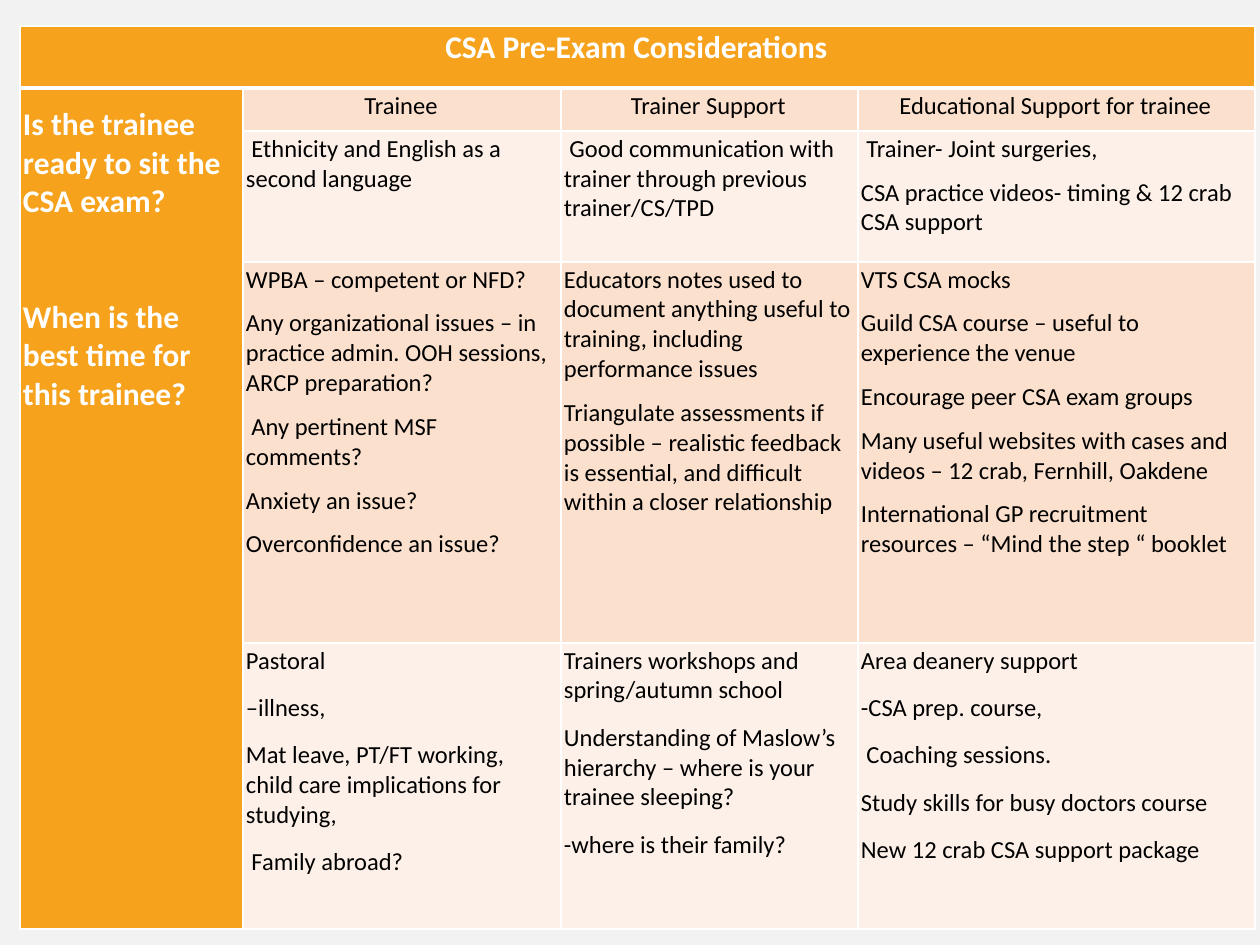
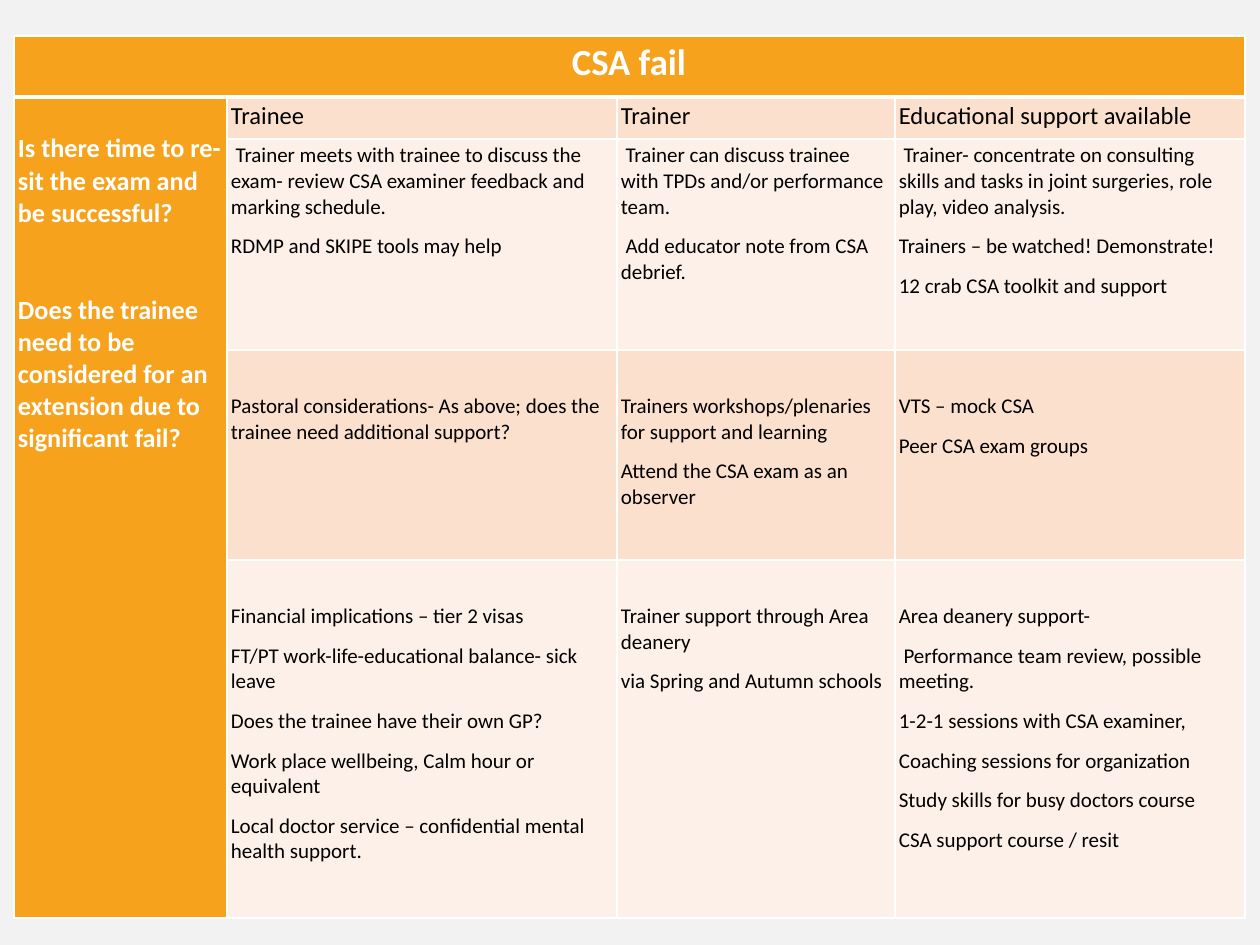
from lxml import etree
from pptx import Presentation
from pptx.dml.color import RGBColor
from pptx.enum import text
from pptx.oxml import ns
from pptx.util import Emu, Pt

SCALE = 914400 / 126
FONT = "Calibri"
WHITE = RGBColor(0xFF, 0xFF, 0xFF)
BLACK = RGBColor(0x00, 0x00, 0x00)
GREY = RGBColor(0xF2, 0xF2, 0xF2)
ORANGE = RGBColor(0xF6, 0xA2, 0x1D)
PEACH = RGBColor(0xFB, 0xE0, 0xCD)
CREAM = RGBColor(0xFD, 0xF0, 0xE8)
CENTER = text.PP_ALIGN.CENTER
LEFT = text.PP_ALIGN.LEFT
RIGHT_PAD = 5

EXAM = {
    "title": "CSA Pre-Exam Considerations",
    "asks": ["Is the trainee ready to sit the CSA exam?",
             "When is the best time for this trainee?"],
    "heads": ["Trainee", "Trainer Support", "Educational Support for trainee"],
    "body": [
        [[" Ethnicity and English as a second language"],
         [" Good communication with trainer through previous trainer/CS/TPD"],
         [" Trainer- Joint surgeries,",
          "CSA practice videos- timing & 12 crab CSA support"]],
        [["WPBA – competent or NFD?",
          "Any organizational issues – in practice admin. OOH sessions, ARCP preparation?",
          " Any pertinent MSF comments?",
          "Anxiety an issue?",
          "Overconfidence an issue?"],
         ["Educators notes used to document anything useful to training, "
          "including performance issues",
          "Triangulate assessments if possible – realistic feedback is essential, "
          "and difficult within a closer relationship"],
         ["VTS CSA mocks",
          "Guild CSA course – useful to experience the venue",
          "Encourage peer CSA exam groups",
          "Many useful websites with cases and videos – 12 crab, Fernhill, Oakdene",
          "International GP recruitment resources – “Mind the step “ booklet"]],
        [["Pastoral", "–illness,",
          "Mat leave, PT/FT working, child care implications for studying,",
          " Family abroad?"],
         ["Trainers workshops and spring/autumn school",
          "Understanding of Maslow’s hierarchy – where is your trainee sleeping?",
          "-where is their family?"],
         ["Area deanery support", "-CSA prep. course,", " Coaching sessions.",
          "Study skills for busy doctors course",
          "New 12 crab CSA support package"]],
    ],
    "place": (20, 26),
    "cols": [223, 318, 297, 397],
    "rows": [62, 43, 131, 381, 286],
    "pad": 3, "sizes": (18, 18, 14), "align": CENTER,
    "drop": 15, "gap": 44, "tops": (0, 0, 0), "after": (8, 8, 10),
}

FAIL = {
    "title": "CSA fail",
    "asks": ["Is there time to re-sit the exam and be successful?",
             "Does the trainee need to be considered for an extension due to significant fail?"],
    "heads": ["Trainee", "Trainer", "Educational support available"],
    "body": [
        [[" Trainer meets with trainee to discuss the exam- review CSA examiner "
          "feedback and marking schedule.",
          "RDMP and SKIPE tools may help"],
         [" Trainer can discuss trainee with TPDs and/or performance team.",
          " Add educator note from CSA debrief."],
         [" Trainer- concentrate on consulting skills and tasks in joint surgeries, "
          "role play, video analysis.",
          "Trainers – be watched! Demonstrate!",
          "12 crab CSA toolkit and support"]],
        [["Pastoral considerations- As above; does the trainee need additional support?"],
         ["Trainers workshops/plenaries for support and learning",
          "Attend the CSA exam as an observer"],
         ["VTS – mock CSA", "Peer CSA exam groups"]],
        [["Financial implications – tier 2 visas",
          "FT/PT work-life-educational balance- sick leave",
          "Does the trainee have their own GP?",
          "Work place wellbeing, Calm hour or equivalent",
          "Local doctor service – confidential mental health support."],
         ["Trainer support through Area deanery",
          "via Spring and Autumn schools"],
         ["Area deanery support-",
          " Performance team review, possible meeting.",
          "1-2-1 sessions with CSA examiner,",
          "Coaching sessions for organization",
          "Study skills for busy doctors course",
          "CSA support course / resit"]],
    ],
    "place": (14, 36),
    "cols": [213, 390, 278, 350],
    "rows": [61, 42, 211, 210, 358],
    "pad": 4, "sizes": (21, 15, 12), "align": LEFT,
    "drop": 32, "gap": 37, "tops": (0, 40, 40), "after": (8, 8, 8),
}


def px(count):
    """Turn px into EMU."""
    return Emu(round(count * SCALE))


def edge(cell, side, width):
    """Draw one white cell border, width in points."""
    line = etree.SubElement(cell._tc.get_or_add_tcPr(), ns.qn("a:ln" + side),
                            w=str(Pt(width)))
    fill = etree.SubElement(line, ns.qn("a:solidFill"))
    etree.SubElement(fill, ns.qn("a:srgbClr"), val=str(WHITE))


def paint(cell, color, row):
    """Give a cell its borders and fill, with a thick line below the title."""
    for side in "LRTB":
        thick = (row, side) in ((0, "B"), (1, "T"))
        edge(cell, side, 3 if thick else 1)
    cell.fill.solid()
    cell.fill.fore_color.rgb = color


def write(cell, lines, size, color, pad, bold=False, align=LEFT, top=0, before=0, after=0):
    """Write paragraphs into a cell; top is extra px, before and after are points."""
    cell.margin_left = cell.margin_bottom = px(pad)
    cell.margin_right = px(RIGHT_PAD)
    cell.margin_top = px(pad + top)
    frame = cell.text_frame
    for index, line in enumerate(lines):
        para = frame.add_paragraph() if index else frame.paragraphs[0]
        para.alignment = align
        para.space_before = Pt(before if index else 0)
        para.space_after = Pt(after)
        run = para.add_run()
        run.text = line
        run.font.name = FONT
        run.font.size = Pt(size)
        run.font.bold = bold
        run.font.color.rgb = color


def grid(slide, data):
    """Add the empty table with its sizes, fills and merged cells."""
    cols, rows = data["cols"], data["rows"]
    place = [px(n) for n in (*data["place"], sum(cols), sum(rows))]
    table = slide.shapes.add_table(len(rows), len(cols), *place).table
    table.first_row = table.horz_banding = False
    for col, width in zip(table.columns, cols):
        col.width = px(width)
    for index, (row, height) in enumerate(zip(table.rows, rows)):
        row.height = px(height)
        band = PEACH if index % 2 else CREAM
        for spot, cell in enumerate(row.cells):
            paint(cell, ORANGE if index == 0 or spot == 0 else band, index)
    table.cell(0, 0).merge(table.cell(0, len(cols) - 1))
    table.cell(1, 0).merge(table.cell(len(rows) - 1, 0))
    return table


def build(deck, data):
    """Add one slide with its guidance table."""
    slide = deck.slides.add_slide(deck.slide_layouts[6])
    slide.background.fill.solid()
    slide.background.fill.fore_color.rgb = GREY
    table = grid(slide, data)
    pad = data["pad"]
    large, mid, small = data["sizes"]
    write(table.cell(0, 0), [data["title"]], large, WHITE, pad, bold=True, align=CENTER)
    write(table.cell(1, 0), data["asks"], mid, WHITE, pad, bold=True,
          top=data["drop"], before=data["gap"])
    for col, head in enumerate(data["heads"], 1):
        write(table.cell(1, col), [head], 14, BLACK, pad, align=data["align"])
    parts = zip(data["body"], data["tops"], data["after"])
    for row, (cells, top, after) in enumerate(parts, 2):
        for col, lines in enumerate(cells, 1):
            write(table.cell(row, col), lines, small, BLACK, pad, top=top, after=after)


def main():
    """Build and save the deck."""
    deck = Presentation()
    deck.slide_width, deck.slide_height = px(1260), px(945)
    for data in (EXAM, FAIL):
        build(deck, data)
    deck.save("out.pptx")


if __name__ == "__main__":
    main()
